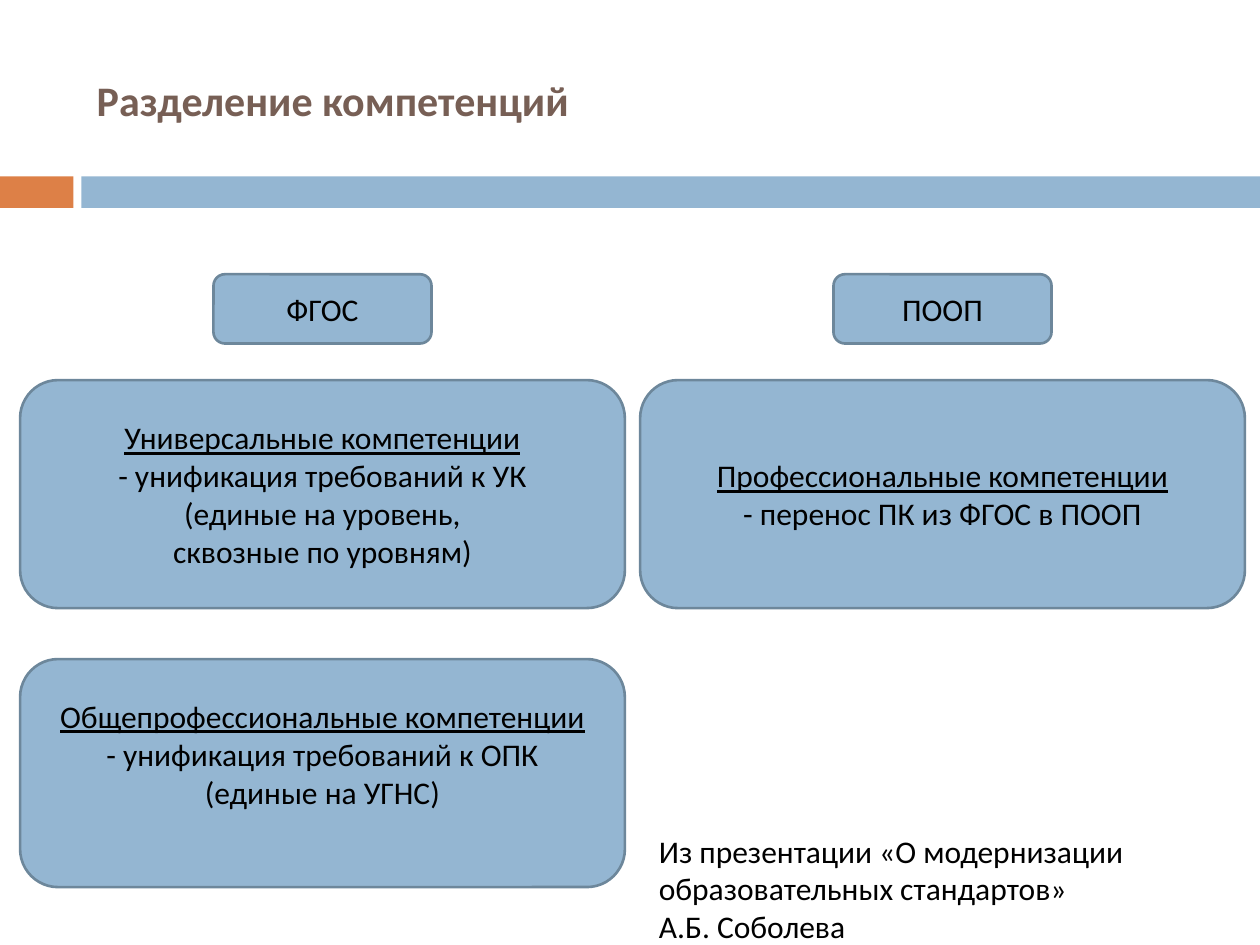
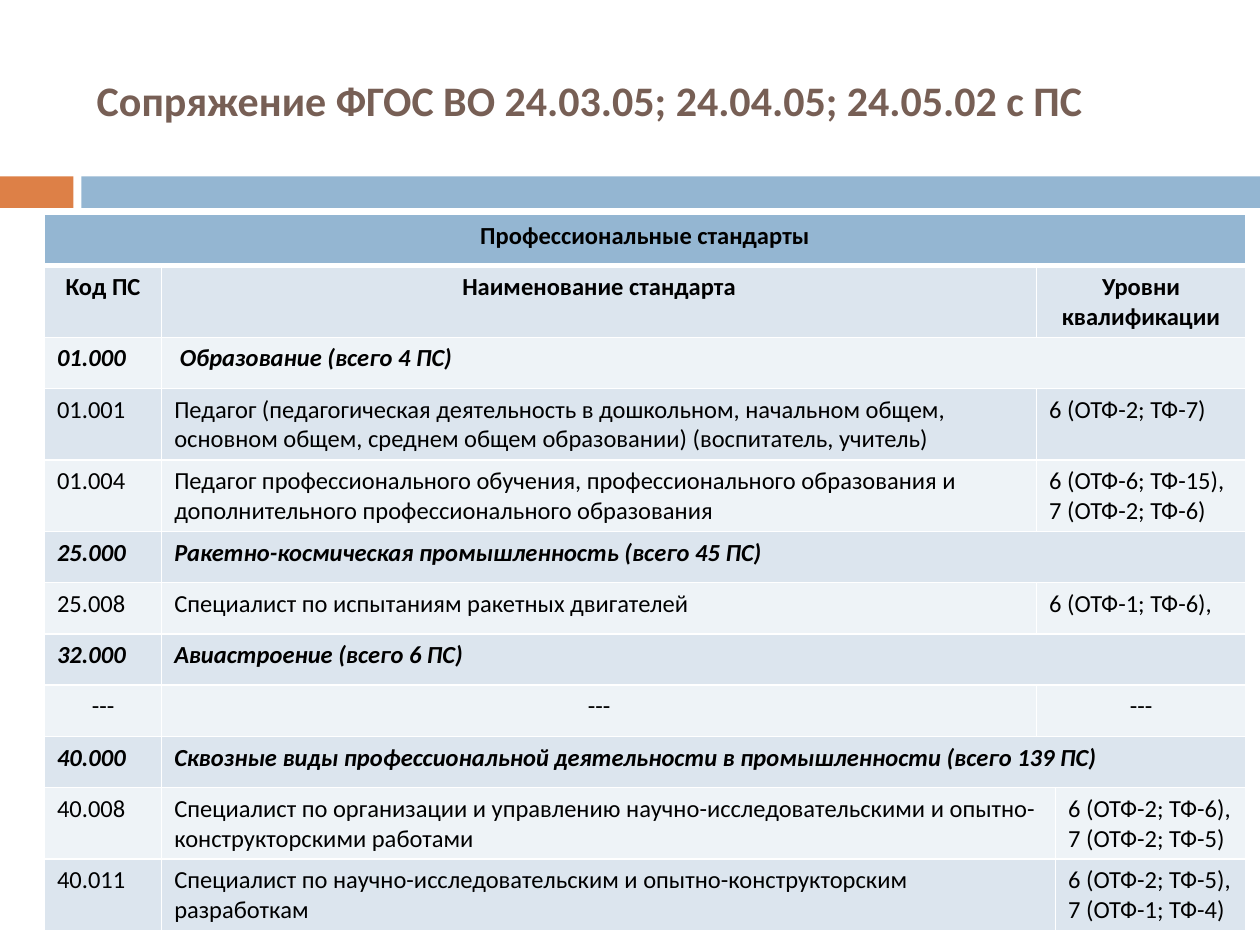
"""Build two slides on splitting competences and matching standards."""
from dataclasses import dataclass

from lxml import etree
from pptx import Presentation
from pptx import util as u
from pptx.dml import color
from pptx.enum import shapes, text
from pptx.oxml import ns

Pt = u.Pt
FONT = "Calibri"
HUES = {
    "accent": "DD8047", "blue": "94B6D2", "edge": "6D879B", "title": "775F55",
    "text": "000000", "white": "FFFFFF", "dark": "DCE5EE", "light": "EEF3F7",
}
LEFT, MID = text.PP_ALIGN.LEFT, text.PP_ALIGN.CENTER
RECT, ROUND = shapes.MSO_SHAPE.RECTANGLE, shapes.MSO_SHAPE.ROUNDED_RECTANGLE
BOX_W, BOX_H = 345.6, 130.3
PILL_W, PILL_H = 124.6, 39.6
COLS = (11.5, 365.8)
ROWS = (217.2, 376.6)
WIDTHS = (67, 500, 10.8, 108.6)
ROW_H = 29.3


@dataclass
class Box:
    """Rounded box on the grid, with extra bottom inset."""
    col: int
    row: int
    words: str
    lift: float = 0


@dataclass
class Row:
    """Table row: cell texts and the columns where they start."""
    cells: tuple
    starts: tuple = (0, 1, 2)
    bold: bool = False
    slant: bool = False
    align: int = LEFT


HEADS = ("ФГОС", "ПООП")
BOXES = (
    Box(0, 0, "Универсальные компетенции\n- унификация требований к УК\n"
              "(единые на уровень,\nсквозные по уровням)"),
    Box(1, 0, "Профессиональные компетенции\n- перенос ПК из ФГОС в ПООП"),
    Box(0, 1, "Общепрофессиональные компетенции\n- унификация требований к ОПК\n"
              "(единые на УГНС)", lift=22),
)
NOTE = "Из презентации «О модернизации образовательных стандартов»\nА.Б. Соболева"


def group(code: str, name: str) -> Row:
    """Make a row that heads a group of standards."""
    return Row((code, name), (0, 1), bold=True, slant=True)


LINES = (
    Row(("Профессиональные стандарты",), (0,), bold=True, align=MID),
    Row(("Код ПС", "Наименование стандарта", "Уровни квалификации"),
        bold=True, align=MID),
    group("01.000", " Образование (всего 4 ПС)"),
    Row(("01.001", "Педагог (педагогическая деятельность в дошкольном, начальном "
         "общем, основном общем, среднем общем образовании) (воспитатель, учитель)",
         "6 (ОТФ-2; ТФ-7)")),
    Row(("01.004", "Педагог профессионального обучения, профессионального "
         "образования и дополнительного профессионального образования",
         "6 (ОТФ-6; ТФ-15),\n7 (ОТФ-2; ТФ-6)")),
    group("25.000", "Ракетно-космическая промышленность (всего 45 ПС)"),
    Row(("25.008", "Специалист по испытаниям ракетных двигателей",
         "6 (ОТФ-1; ТФ-6),")),
    group("32.000", "Авиастроение (всего 6 ПС)"),
    Row(("---",) * 3, align=MID),
    group("40.000", "Сквозные виды профессиональной деятельности в "
          "промышленности (всего 139 ПС)"),
    Row(("40.008", "Специалист по организации и управлению "
         "научно-исследовательскими и опытно-конструкторскими работами",
         "6 (ОТФ-2; ТФ-6),\n7 (ОТФ-2; ТФ-5)"), (0, 1, 3)),
    Row(("40.011", "Специалист по научно-исследовательским и "
         "опытно-конструкторским разработкам",
         "6 (ОТФ-2; ТФ-5),\n7 (ОТФ-1; ТФ-4)"), (0, 1, 3)),
)


def rgb(name: str) -> color.RGBColor:
    """Look up a colour by name."""
    return color.RGBColor.from_string(HUES[name])


def write(frame, words: str, *, size: float = 18, hue: str = "text",
          bold: bool = False, slant: bool = False, align: int = LEFT,
          under: bool = False) -> None:
    """Fill a text frame line by line; under marks the first line."""
    for num, line in enumerate(words.split("\n")):
        para = frame.add_paragraph() if num else frame.paragraphs[0]
        para.alignment = align
        run = para.add_run()
        run.text = line
        font = run.font
        font.name, font.size = FONT, Pt(size)
        font.bold, font.italic = bold, slant
        font.underline = under and num == 0
        font.color.rgb = rgb(hue)


def label(slide, words: str, x: float, y: float, w: float, h: float,
          anchor=text.MSO_ANCHOR.TOP, **style) -> None:
    """Add a wrapped text box."""
    frame = slide.shapes.add_textbox(Pt(x), Pt(y), Pt(w), Pt(h)).text_frame
    frame.word_wrap = True
    frame.vertical_anchor = anchor
    write(frame, words, **style)


def block(slide, kind, x: float, y: float, w: float, h: float,
          fill: str = "blue", edge: str = ""):
    """Add a flat preset shape."""
    shape = slide.shapes.add_shape(kind, Pt(x), Pt(y), Pt(w), Pt(h))
    shape.shadow.inherit = False
    shape.fill.solid()
    shape.fill.fore_color.rgb = rgb(fill)
    if edge:
        shape.line.color.rgb = rgb(edge)
        shape.line.width = Pt(1.5)
    else:
        shape.line.fill.background()
    return shape


def panel(slide, words: str, x: float, y: float, w: float, h: float,
          lift: float = 0, **style) -> None:
    """Add a rounded box with centred text."""
    frame = block(slide, ROUND, x, y, w, h, edge="edge").text_frame
    frame.word_wrap = True
    frame.vertical_anchor = text.MSO_ANCHOR.MIDDLE
    frame.margin_bottom = Pt(3.6 + lift)
    write(frame, words, align=MID, **style)


def start(deck, title: str):
    """Add a blank slide with the shared bands and title."""
    slide = deck.slides.add_slide(deck.slide_layouts[6])
    block(slide, RECT, 0, 100.8, 42, 18, fill="accent")
    block(slide, RECT, 46.5, 100.8, 673.5, 18)
    label(slide, title, 48.2, 18, 642.2, 77.8, text.MSO_ANCHOR.MIDDLE,
          size=24, hue="title", bold=True)
    return slide


def frame_cell(cell, top: float, base: float) -> None:
    """Draw white borders round a cell."""
    props = cell._tc.get_or_add_tcPr()
    for num, (side, width) in enumerate(zip("LRTB", (1, 1, top, base))):
        line = etree.Element(ns.qn(f"a:ln{side}"), w=str(Pt(width)))
        fill = etree.SubElement(line, ns.qn("a:solidFill"))
        etree.SubElement(fill, ns.qn("a:srgbClr"), val=HUES["white"])
        props.insert(num, line)


def split(deck) -> None:
    """Draw the slide that divides competences."""
    slide = start(deck, "Разделение компетенций")
    for x, head in zip(COLS, HEADS):
        panel(slide, head, x + (BOX_W - PILL_W) / 2, 156.7, PILL_W, PILL_H)
    for box in BOXES:
        panel(slide, box.words, COLS[box.col], ROWS[box.row], BOX_W, BOX_H,
              lift=box.lift, under=True)
    label(slide, NOTE, 369.4, 471.6, 350.6, 72.7)


def match(deck) -> None:
    """Draw the slide with the table of standards."""
    slide = start(deck, "Сопряжение ФГОС ВО 24.03.05; 24.04.05; 24.05.02 с ПС")
    grid = slide.shapes.add_table(
        len(LINES), len(WIDTHS), Pt(25.4), Pt(122.6), Pt(sum(WIDTHS)),
        Pt(ROW_H * len(LINES))).table
    for col, width in zip(grid.columns, WIDTHS):
        col.width = Pt(width)
    for num, row in enumerate(LINES):
        grid.rows[num].height = Pt(ROW_H)
        fill = "blue" if num == 0 else "dark" if num % 2 else "light"
        for col in range(len(WIDTHS)):
            cell = grid.cell(num, col)
            cell.fill.solid()
            cell.fill.fore_color.rgb = rgb(fill)
            frame_cell(cell, 3 if num == 1 else 1, 3 if num == 0 else 1)
        ends = (*row.starts[1:], len(WIDTHS))
        for words, first, end in zip(row.cells, row.starts, ends):
            cell = grid.cell(num, first)
            if end - first > 1:
                cell.merge(grid.cell(num, end - 1))
            write(cell.text_frame, words, size=14, bold=row.bold,
                  slant=row.slant, align=row.align)


def main() -> None:
    """Build and save the deck."""
    deck = Presentation()
    deck.slide_width, deck.slide_height = Pt(720), Pt(540)
    split(deck)
    match(deck)
    deck.save("out.pptx")


if __name__ == "__main__":
    main()
